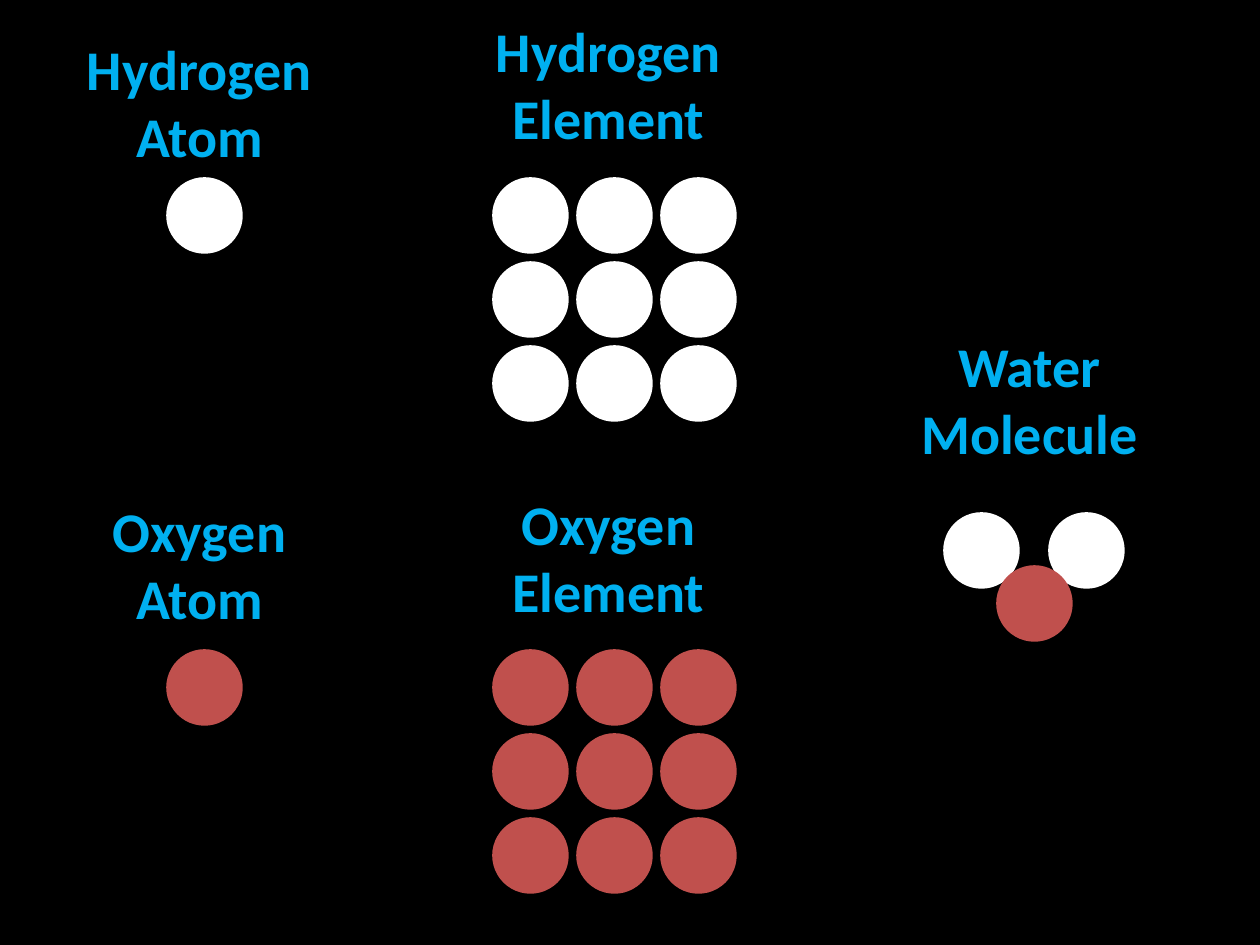
from itertools import product

from pptx import Presentation
from pptx.dml.color import RGBColor
from pptx.enum.shapes import MSO_SHAPE
from pptx.enum.text import MSO_AUTO_SIZE, PP_ALIGN
from pptx.util import Emu, Pt

PX = 914400 // 126
COLORS = {"background": "000000", "label": "00B0F0",
          "hydrogen": "FFFFFF", "oxygen": "C0504D"}
LABEL_FONT = {"name": "Calibri", "size": Pt(32), "bold": True}
ATOM_SIZE = 73
ATOM_PITCH = 84
LABEL_WIDTH, LABEL_HEIGHT = 315, 178


def px(n):
    return Emu(n * PX)


def color(name):
    return RGBColor.from_string(COLORS[name])


def add_label(s, text, left, top):
    box = s.shapes.add_textbox(px(left), px(top), px(LABEL_WIDTH), px(LABEL_HEIGHT))
    tf = box.text_frame
    tf.word_wrap = True
    tf.auto_size = MSO_AUTO_SIZE.SHAPE_TO_FIT_TEXT
    p = tf.paragraphs[0]
    p.alignment = PP_ALIGN.CENTER
    r = p.add_run()
    r.text = text
    for key, value in LABEL_FONT.items():
        setattr(r.font, key, value)
    r.font.color.rgb = color("label")


def add_atom(s, kind, left, top):
    sp = s.shapes.add_shape(MSO_SHAPE.OVAL, px(left), px(top),
                            px(ATOM_SIZE), px(ATOM_SIZE))
    sp.shadow.inherit = False
    sp.fill.solid()
    sp.fill.fore_color.rgb = color(kind)
    sp.line.color.rgb = color(kind)
    sp.line.width = Pt(2)


def add_element(s, kind, left, top, count=3):
    for row, col in product(range(count), repeat=2):
        add_atom(s, kind, left + col * ATOM_PITCH, top + row * ATOM_PITCH)


def main():
    prs = Presentation()
    prs.slide_width, prs.slide_height = px(1260), px(945)
    s = prs.slides.add_slide(prs.slide_layouts[6])
    s.background.fill.solid()
    s.background.fill.fore_color.rgb = color("background")

    # Single atom and 3 x 3 element of each kind
    for kind, atom_top, atom_label_top, element_label_top in (
            ("hydrogen", 179, 28, 10), ("oxygen", 651, 490, 483)):
        add_atom(s, kind, 168, atom_top)
        add_label(s, f"{kind.title()} Atom", 42, atom_label_top)
        add_element(s, kind, 494, atom_top)
        add_label(s, f"{kind.title()} Element", 451, element_label_top)

    # Water molecule, oxygen in front
    add_label(s, "Water Molecule", 872, 325)
    for kind, left, top in (("hydrogen", 1050, 514), ("hydrogen", 945, 514),
                            ("oxygen", 998, 567)):
        add_atom(s, kind, left, top)

    prs.save("out.pptx")


if __name__ == "__main__":
    main()
